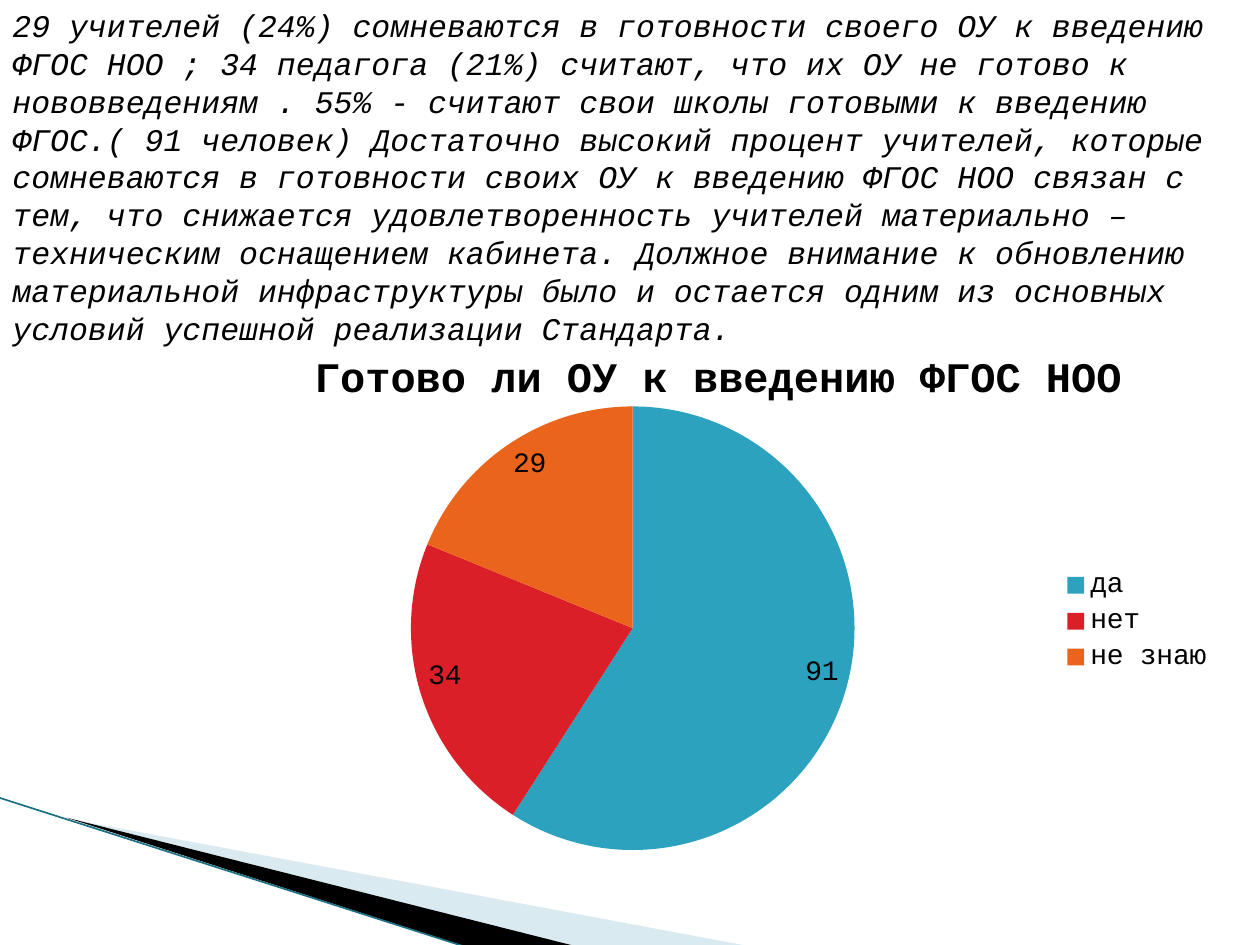
from dataclasses import dataclass

from lxml import etree
from pptx import Presentation
from pptx.chart.data import CategoryChartData
from pptx.dml.color import RGBColor
from pptx.enum.chart import XL_CHART_TYPE, XL_LABEL_POSITION, XL_LEGEND_POSITION
from pptx.enum.shapes import MSO_CONNECTOR
from pptx.enum.text import MSO_AUTO_SIZE
from pptx.oxml import parse_xml
from pptx.oxml.ns import nsdecls, qn
from pptx.util import Inches, Pt


@dataclass(frozen=True)
class Theme:
    font: str = "Courier New"
    text: str = "000000"
    pale_wedge: str = "A0CBDC"
    dark_wedge: str = "000000"
    edge: str = "1B7085"
    slices: tuple = ("2DA2BF", "DA1F28", "EB641B")
    body_size: int = 18
    title_size: int = 24
    label_size: int = 16
    chart_size: int = 10


def manual_layout(**values):
    """Return a c:layout element; keyword names are its child tags."""
    children = "".join(f'<c:{tag} val="{value}"/>' for tag, value in values.items())
    return parse_xml(
        f'<c:layout {nsdecls("c")}><c:manualLayout>{children}</c:manualLayout></c:layout>'
    )


class SlideBuilder:
    def __init__(self, slide, theme):
        self.slide = slide
        self.theme = theme

    def style_font(self, font, size, bold=False, italic=False):
        font.name = self.theme.font
        font.size = Pt(size)
        font.bold = bold
        font.italic = italic
        font.color.rgb = RGBColor.from_string(self.theme.text)

    def wedge(self, points, color, opacity=100):
        start, *rest = [(Inches(x), Inches(y)) for x, y in points]
        builder = self.slide.shapes.build_freeform(*start)
        builder.add_line_segments(rest, close=True)
        shape = builder.convert_to_shape()
        shape.shadow.inherit = False
        shape.line.fill.background()
        shape.fill.solid()
        shape.fill.fore_color.rgb = RGBColor.from_string(color)
        if opacity < 100:
            color_element = shape.fill._xPr.find(".//" + qn("a:srgbClr"))
            etree.SubElement(color_element, qn("a:alpha"), val=str(opacity * 1000))

    def line(self, start, end, color, width):
        connector = self.slide.shapes.add_connector(
            MSO_CONNECTOR.STRAIGHT, *map(Inches, start + end)
        )
        connector.line.color.rgb = RGBColor.from_string(color)
        connector.line.width = Pt(width)
        etree.SubElement(connector._element.spPr, qn("a:effectLst"))

    def text(self, box, wording):
        shape = self.slide.shapes.add_textbox(*map(Inches, box))
        frame = shape.text_frame
        frame.word_wrap = True
        frame.auto_size = MSO_AUTO_SIZE.SHAPE_TO_FIT_TEXT
        run = frame.paragraphs[0].add_run()
        run.text = wording
        self.style_font(run.font, self.theme.body_size, italic=True)

    def pie(self, box, title, answers):
        data = CategoryChartData()
        data.categories = list(answers)
        data.add_series(title, list(answers.values()))
        chart = self.slide.shapes.add_chart(
            XL_CHART_TYPE.PIE, *map(Inches, box), data
        ).chart
        self.style_font(chart.font, self.theme.chart_size)

        chart.has_title = True
        run = chart.chart_title.text_frame.paragraphs[0].add_run()
        run.text = title
        self.style_font(run.font, self.theme.title_size, bold=True)
        title_element = chart.chart_title._element
        for old in title_element.findall(qn("c:layout")):
            title_element.remove(old)
        title_element.find(qn("c:tx")).addnext(
            manual_layout(xMode="edge", yMode="edge", x=0.235, y=0.035)
        )
        chart.chart_title.include_in_layout = False

        chart.has_legend = True
        chart.legend.position = XL_LEGEND_POSITION.RIGHT
        chart.legend.include_in_layout = False
        self.style_font(chart.legend.font, self.theme.label_size)

        plot = chart.plots[0]
        plot.vary_by_categories = True
        for index, color in enumerate(self.theme.slices):
            fill = plot.series[0].points[index].format.fill
            fill.solid()
            fill.fore_color.rgb = RGBColor.from_string(color)
        labels = plot.series[0].data_labels
        labels.show_value = True
        labels.position = XL_LABEL_POSITION.INSIDE_END
        self.style_font(labels.font, self.theme.label_size)

        plot_area = plot._element.getparent()
        for old in plot_area.findall(qn("c:layout")):
            plot_area.remove(old)
        plot_area.insert(0, manual_layout(
            layoutTarget="inner", xMode="edge", yMode="edge",
            x=0.107, y=0.139, w=0.798, h=0.746,
        ))


def main():
    theme = Theme()
    presentation = Presentation()
    presentation.slide_width = Inches(10)
    presentation.slide_height = Inches(7.5)
    slide = presentation.slides.add_slide(presentation.slide_layouts[6])
    builder = SlideBuilder(slide, theme)

    builder.wedge([(0.55, 6.5), (5.95, 7.51), (4.56, 7.51)], theme.pale_wedge, opacity=40)
    builder.wedge([(0.53, 6.49), (4.57, 7.51), (3.72, 7.52)], theme.dark_wedge)
    builder.line((-0.01, 6.33), (3.71, 7.52), theme.edge, 0.95)

    builder.pie(
        (0.2, 2.57, 9.53, 4.72),
        "Готово ли ОУ к введению ФГОС НОО",
        {"да": 91, "нет": 34, "не знаю": 29},
    )
    builder.text(
        (0, 0, 10, 2.83),
        "29 учителей (24%) сомневаются в готовности своего ОУ к введению ФГОС НОО ; "
        "34 педагога (21%) считают, что их ОУ не готово к нововведениям . "
        "55% - считают свои школы готовыми к введению ФГОС.( 91 человек) "
        "Достаточно высокий процент учителей, которые сомневаются в готовности "
        "своих ОУ к введению ФГОС НОО связан с тем, что снижается "
        "удовлетворенность учителей материально – техническим оснащением кабинета. "
        "Должное внимание к обновлению материальной инфраструктуры было и остается "
        "одним из основных условий успешной реализации Стандарта.",
    )
    presentation.save("out.pptx")


if __name__ == "__main__":
    main()
